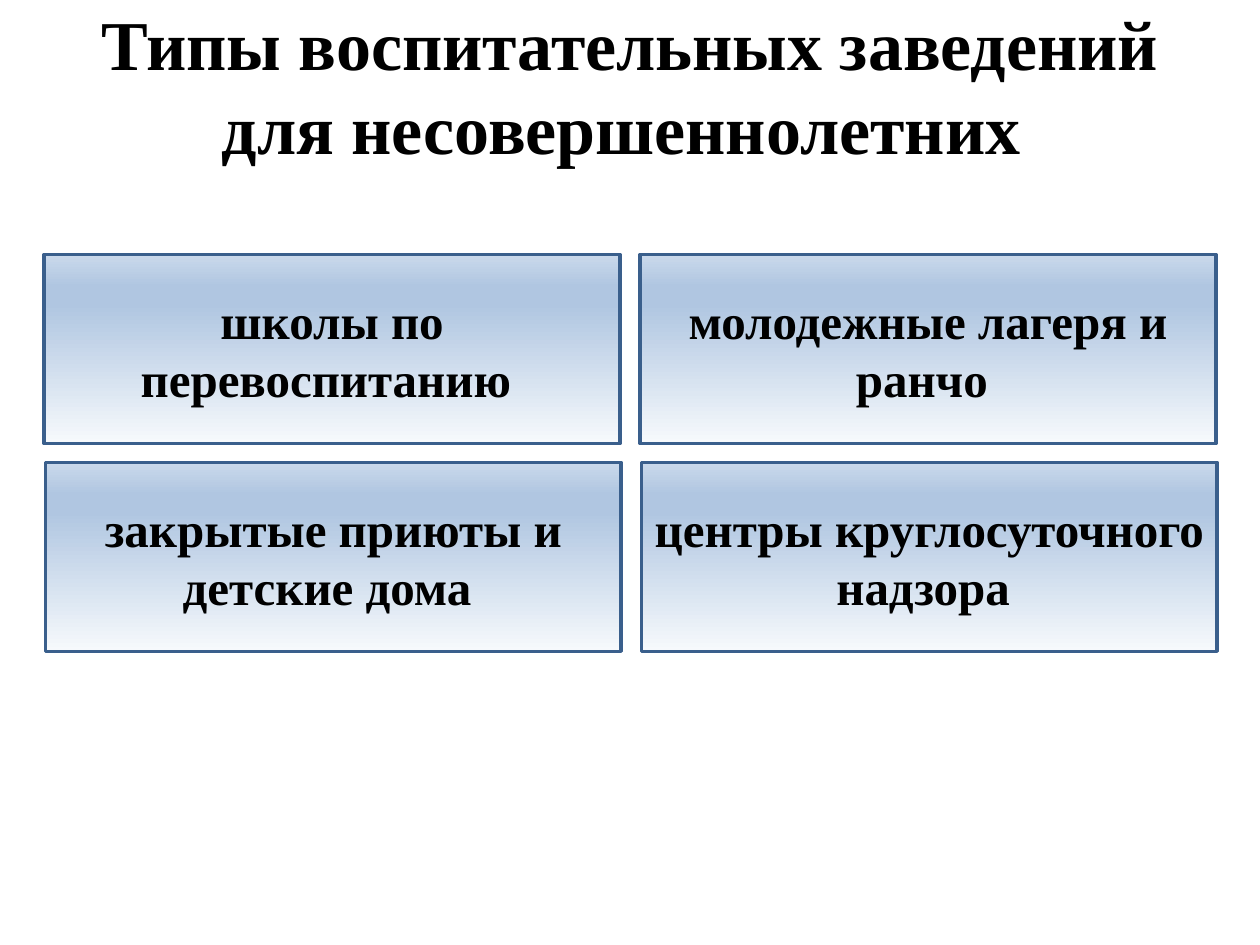
from dataclasses import dataclass

from lxml.etree import SubElement
from pptx import Presentation
from pptx.dml.color import RGBColor
from pptx.enum.shapes import MSO_SHAPE as Preset
from pptx.enum.text import MSO_ANCHOR as Anchor, MSO_AUTO_SIZE as AutoSize, PP_ALIGN as Align
from pptx.oxml.ns import qn
from pptx.shapes.autoshape import Shape
from pptx.slide import Slide
from pptx.util import Inches, Pt


@dataclass(frozen=True)
class Theme:
    font: str = "Times New Roman"
    text: str = "000000"
    outline: str = "3A5F8C"
    outline_width: float = 2
    title_size: int = 40
    card_size: int = 28
    gradient: tuple = ((0, "F6F9FC"), (74, "B0C6E1"), (83, "B0C6E1"), (100, "CAD9EB"))


@dataclass(frozen=True)
class Card:
    text: str
    column: int
    row: int


THEME = Theme()
CARD_WIDTH, CARD_HEIGHT = 4.57, 1.5
GRID_LEFT, GRID_TOP = 0.35, 2.02
COLUMN_STEP, ROW_STEP, ROW_SHIFT = 4.73, 1.65, 0.01
CARDS = (
    Card("школы по перевоспитанию ", 0, 0),
    Card("молодежные лагеря и ранчо ", 1, 0),
    Card("закрытые приюты и детские дома ", 0, 1),
    Card("центры круглосуточного надзора ", 1, 1),
)


def write_text(shape: Shape, text: str, size: int) -> None:
    frame = shape.text_frame
    frame.text = text
    frame.word_wrap = True
    frame.auto_size = AutoSize.NONE
    frame.vertical_anchor = Anchor.MIDDLE
    paragraph = frame.paragraphs[0]
    paragraph.alignment = Align.CENTER
    font = paragraph.font
    font.name, font.size, font.bold = THEME.font, Pt(size), True
    font.color.rgb = RGBColor.from_string(THEME.text)


def fill_gradient(shape: Shape) -> None:
    shape.fill.gradient()
    shape.fill.gradient_angle = 90
    stops = shape._element.spPr.find(qn("a:gradFill")).find(qn("a:gsLst"))
    for stop in list(stops):
        stops.remove(stop)
    for position, color in THEME.gradient:
        stop = SubElement(stops, qn("a:gs"), pos=str(position * 1000))
        SubElement(stop, qn("a:srgbClr"), val=color)


def draw_card(slide: Slide, card: Card) -> None:
    left = GRID_LEFT + card.column * COLUMN_STEP + card.row * ROW_SHIFT
    top = GRID_TOP + card.row * ROW_STEP
    shape = slide.shapes.add_shape(
        Preset.RECTANGLE, Inches(left), Inches(top), Inches(CARD_WIDTH), Inches(CARD_HEIGHT)
    )
    shape.shadow.inherit = False
    fill_gradient(shape)
    shape.line.color.rgb = RGBColor.from_string(THEME.outline)
    shape.line.width = Pt(THEME.outline_width)
    write_text(shape, card.text, THEME.card_size)


def draw_title(slide: Slide, text: str) -> None:
    title = slide.shapes.title
    title.left, title.top = Inches(0.5), Inches(0.25)
    title.width, title.height = Inches(9), Inches(0.84)
    write_text(title, text, THEME.title_size)


def main() -> None:
    presentation = Presentation()
    presentation.slide_width, presentation.slide_height = Inches(10), Inches(7.5)
    slide = presentation.slides.add_slide(presentation.slide_layouts.get_by_name("Title Only"))
    draw_title(slide, "Типы воспитательных заведений для несовершеннолетних ")
    for card in CARDS:
        draw_card(slide, card)
    presentation.save("out.pptx")


if __name__ == "__main__":
    main()
